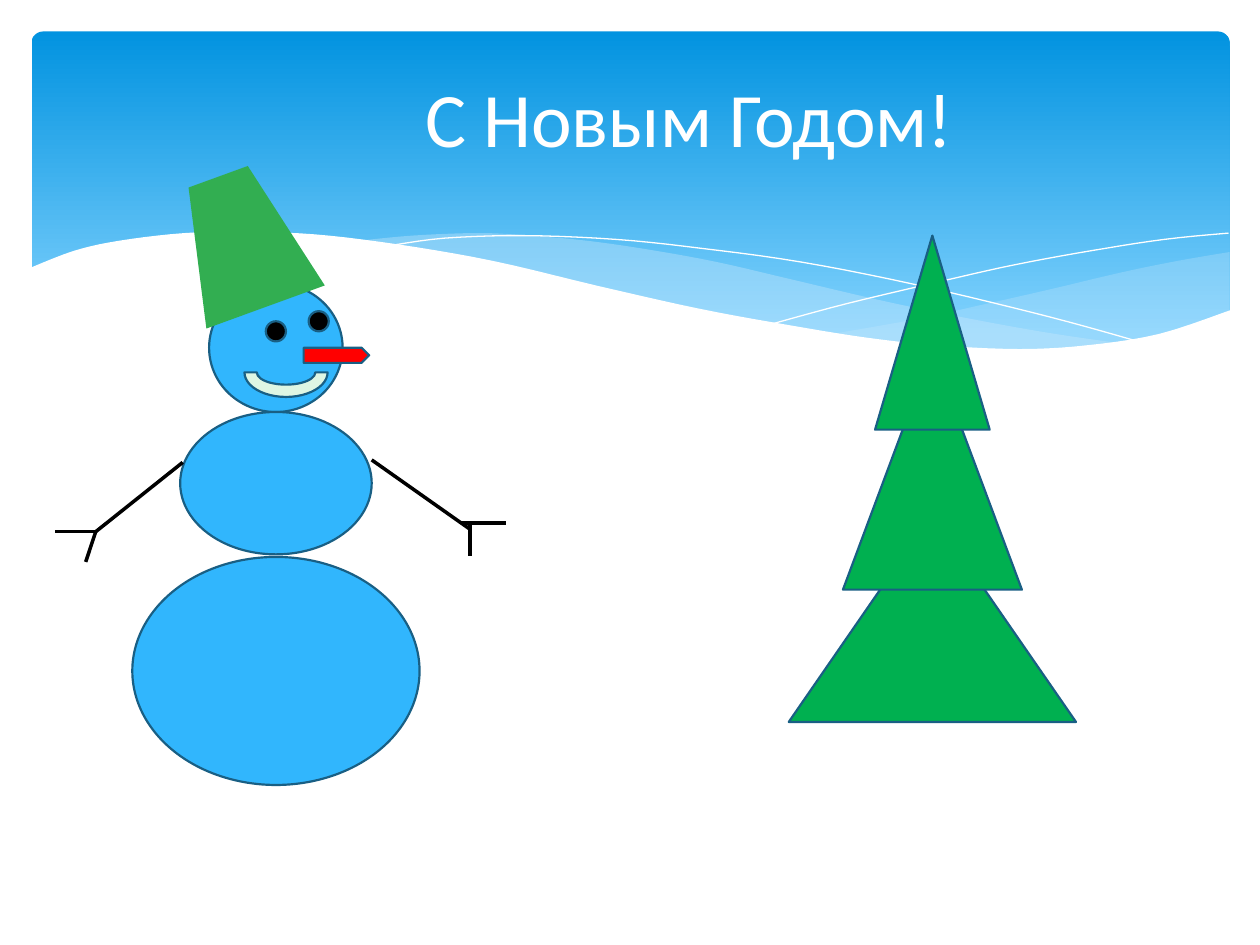
from dataclasses import dataclass

from lxml import etree
from pptx import Presentation
from pptx.dml.color import RGBColor
from pptx.enum.shapes import MSO_CONNECTOR, MSO_SHAPE
from pptx.enum.text import MSO_ANCHOR, PP_ALIGN
from pptx.oxml.ns import qn
from pptx.util import Inches, Pt

OVAL = MSO_SHAPE.OVAL
TRIANGLE = MSO_SHAPE.ISOSCELES_TRIANGLE
TRAPEZOID = MSO_SHAPE.TRAPEZOID
PENTAGON = MSO_SHAPE.PENTAGON
BLOCK_ARC = MSO_SHAPE.BLOCK_ARC
ROUNDED_RECTANGLE = MSO_SHAPE.ROUNDED_RECTANGLE
STRAIGHT = MSO_CONNECTOR.STRAIGHT
MIDDLE = MSO_ANCHOR.MIDDLE
CENTER = PP_ALIGN.CENTER


@dataclass(frozen=True)
class Theme:
    font: str = "Calibri"
    title_size: float = 44
    outline_width: float = 1.25
    stick_width: float = 2
    white: str = "FFFFFF"
    black: str = "000000"
    sky_top: str = "0293E0"
    sky_bottom: str = "83D3FE"
    mist: str = "C6E7FC"
    snow: str = "31B6FD"
    outline: str = "195F84"
    hat: str = "32AE51"
    nose: str = "FF0000"
    mouth: str = "DEF6E4"
    tree: str = "00B050"


def color(value):
    return RGBColor.from_string(value)


def smooth_curve(knots, steps=5):
    """Return points on a Catmull-Rom curve through the knots."""
    padded = [knots[0], *knots, knots[-1]]
    points = []
    for a, b, c, d in zip(padded, padded[1:], padded[2:], padded[3:]):
        for step in range(steps):
            t = step / steps
            points.append(tuple(
                0.5 * (2 * q + (r - p) * t + (2 * p - 5 * q + 4 * r - s) * t**2
                       + (3 * q - p - 3 * r + s) * t**3)
                for p, q, r, s in zip(a, b, c, d)))
    return points + [knots[-1]]


class SlideArtist:
    def __init__(self, slide, theme):
        self.slide = slide
        self.theme = theme

    def shape(self, kind, left, top, width, height, fill, outlined=True, rotation=0):
        shape = self.slide.shapes.add_shape(
            kind, Inches(left), Inches(top), Inches(width), Inches(height))
        shape.shadow.inherit = False
        shape.rotation = rotation
        shape.fill.solid()
        shape.fill.fore_color.rgb = color(fill)
        if outlined:
            shape.line.color.rgb = color(self.theme.outline)
            shape.line.width = Pt(self.theme.outline_width)
        else:
            shape.line.fill.background()
        return shape

    def sky(self, left, top, width, height):
        sky = self.shape(ROUNDED_RECTANGLE, left, top, width, height,
                         self.theme.sky_top, outlined=False)
        sky.adjustments[0] = 0.034
        sky.fill.gradient()
        sky.fill.gradient_angle = 270
        first, last = sky.fill.gradient_stops
        first.position, last.position = 0, 0.9
        first.color.rgb = color(self.theme.sky_top)
        last.color.rgb = color(self.theme.sky_bottom)

    def freeform(self, points, close):
        vertices = [(Inches(x), Inches(y)) for x, y in points]
        builder = self.slide.shapes.build_freeform(*vertices[0], scale=1.0)
        builder.add_line_segments(vertices[1:], close=close)
        shape = builder.convert_to_shape()
        shape.shadow.inherit = False
        return shape

    def wave(self, points, fill, opacity=100):
        wave = self.freeform(points, close=True)
        wave.line.fill.background()
        wave.fill.solid()
        wave.fill.fore_color.rgb = color(fill)
        if opacity < 100:
            fill_color = wave.fill._xPr.find(qn("a:solidFill"))[0]
            etree.SubElement(fill_color, qn("a:alpha"), val=str(opacity * 1000))

    def hairline(self, points):
        hairline = self.freeform(points, close=False)
        hairline.fill.background()
        hairline.line.color.rgb = color(self.theme.white)
        hairline.line.width = Pt(0)

    def stick(self, start, end):
        stick = self.slide.shapes.add_connector(
            STRAIGHT, *(Inches(value) for value in (*start, *end)))
        stick.line.color.rgb = color(self.theme.black)
        stick.line.width = Pt(self.theme.stick_width)
        etree.SubElement(stick._element.spPr, qn("a:effectLst"))

    def title(self, text, left, top, width, height):
        box = self.slide.shapes.add_textbox(
            Inches(left), Inches(top), Inches(width), Inches(height))
        frame = box.text_frame
        frame.word_wrap = True
        frame.vertical_anchor = MIDDLE
        paragraph = frame.paragraphs[0]
        paragraph.alignment = CENTER
        run = paragraph.add_run()
        run.text = text
        run.font.name = self.theme.font
        run.font.size = Pt(self.theme.title_size)
        run.font.color.rgb = color(self.theme.white)


def draw_background(artist):
    theme = artist.theme
    artist.sky(0.25, 0.25, 9.51, 2.7)

    right_top = [(9.76, 2), (9.35, 2.07), (8.91, 2.16), (8.32, 2.3),
                 (7.79, 2.42), (7.29, 2.53), (6.61, 2.65)]
    right_bottom = [(6.61, 2.65), (7.05, 2.71), (7.57, 2.76), (8.14, 2.78),
                    (8.63, 2.75), (9.05, 2.69), (9.42, 2.59), (9.76, 2.47)]
    artist.wave(smooth_curve(right_top) + smooth_curve(right_bottom), theme.mist, 29)

    middle_top = [(8.93, 2.73), (8.37, 2.65), (7.75, 2.54), (7.06, 2.4),
                  (6.29, 2.22), (5.69, 2.08), (5.14, 1.98), (4.65, 1.91),
                  (4.2, 1.87), (3.8, 1.85), (3.28, 1.87), (2.86, 1.91)]
    middle_bottom = [(2.86, 1.91), (3.42, 1.99), (4.04, 2.11), (4.49, 2.22),
                     (5.3, 2.4), (6.01, 2.55), (6.65, 2.66), (7.22, 2.74),
                     (7.73, 2.77), (8.18, 2.78), (8.57, 2.77), (8.93, 2.73)]
    artist.wave(smooth_curve(middle_top) + smooth_curve(middle_bottom), theme.mist, 40)

    artist.hairline(smooth_curve([
        (3.09, 1.95), (3.53, 1.89), (4.16, 1.87), (4.89, 1.9), (5.56, 1.97),
        (6.36, 2.08), (7.27, 2.26), (8.31, 2.51), (9.07, 2.72)]))
    artist.hairline(smooth_curve([
        (6.13, 2.57), (6.72, 2.41), (7.48, 2.23), (8.06, 2.1), (8.66, 1.99),
        (9.24, 1.9), (9.75, 1.85)]))

    snow_top = [(0.23, 2.13), (0.59, 1.99), (0.95, 1.91), (1.46, 1.85),
                (1.93, 1.84), (2.5, 1.86), (3.16, 1.94), (3.91, 2.07),
                (4.75, 2.27), (5.55, 2.45), (6.26, 2.58), (6.88, 2.68),
                (7.44, 2.74), (8.09, 2.77), (8.63, 2.74), (9.2, 2.65), (9.77, 2.46)]
    artist.wave(smooth_curve(snow_top) + [(9.77, 3.29), (0.23, 3.29)], theme.white)


def draw_snowman(artist):
    theme = artist.theme
    for ball in ((1.05, 4.42, 2.28, 1.81), (1.66, 2.25, 1.06, 1.02),
                 (1.43, 3.27, 1.52, 1.13)):
        artist.shape(OVAL, *ball, theme.snow)
    artist.shape(TRAPEZOID, 1.42, 1.37, 1, 1.1, theme.hat, outlined=False, rotation=340)
    for left, top in ((2.11, 2.55), (2.45, 2.47)):
        artist.shape(OVAL, left, top, 0.16, 0.16, theme.black)
    artist.shape(PENTAGON, 2.41, 2.76, 0.52, 0.12, theme.nose)
    artist.shape(BLOCK_ARC, 1.94, 2.76, 0.66, 0.39, theme.mouth, rotation=180)

    left_hand = (0.76, 4.22)
    for start, end in ((left_hand, (0.44, 4.22)), ((1.45, 3.67), left_hand),
                       (left_hand, (0.68, 4.46)), ((2.95, 3.65), (3.73, 4.2)),
                       ((3.73, 4.17), (3.73, 4.41)), ((3.67, 4.15), (4.02, 4.15))):
        artist.stick(start, end)


def draw_tree(artist):
    center = 7.4
    for top, width, height in ((4.08, 2.28, 1.65), (2.78, 1.42, 1.9), (1.87, 0.91, 1.54)):
        artist.shape(TRIANGLE, center - width / 2, top, width, height, artist.theme.tree)


def main():
    presentation = Presentation()
    presentation.slide_width = Inches(10)
    presentation.slide_height = Inches(7.5)
    slide = presentation.slides.add_slide(presentation.slide_layouts[6])
    artist = SlideArtist(slide, Theme())
    draw_background(artist)
    artist.title("С Новым Годом!", 1.91, 0.3, 7.12, 1.25)
    draw_snowman(artist)
    draw_tree(artist)
    presentation.save("out.pptx")


if __name__ == "__main__":
    main()
